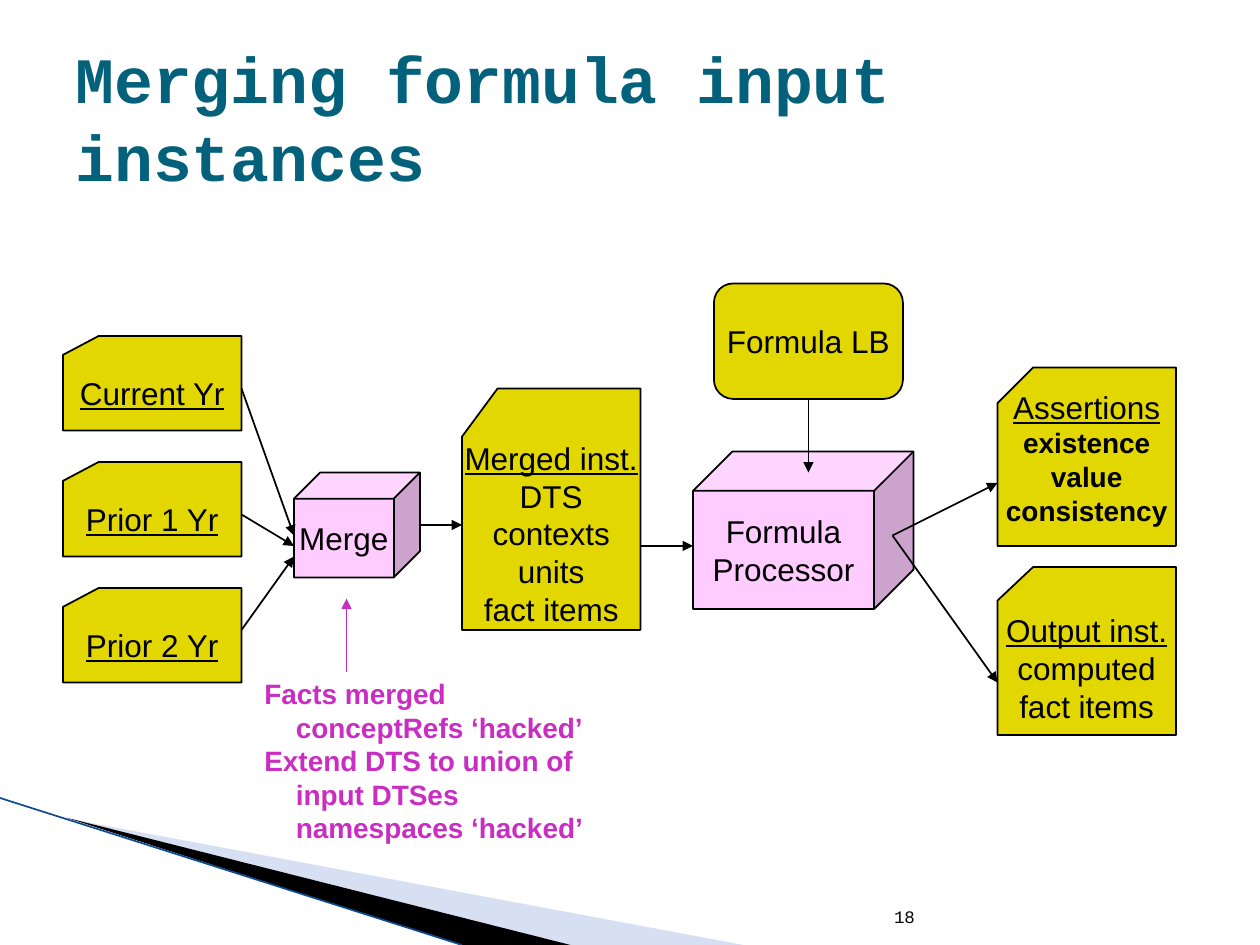
from dataclasses import dataclass

from lxml.etree import SubElement
from pptx import Presentation
from pptx.dml.color import RGBColor
from pptx.enum.shapes import MSO_CONNECTOR, MSO_SHAPE
from pptx.enum.text import MSO_ANCHOR, MSO_AUTO_SIZE, PP_ALIGN
from pptx.oxml.ns import qn
from pptx.util import Emu, Inches, Pt

CELL = Inches(1 / 12)
YELLOW, PINK, MAGENTA = "E2D700", "FFCCFF", "C92DC2"
BLACK, TEAL, PALE_BLUE, DARK_BLUE = "000000", "04617B", "9DB2E1", "0B4A94"


@dataclass(frozen=True)
class Line:
    text: str
    size: float = 18
    bold: bool = False
    underline: bool = False


@dataclass(frozen=True)
class Node:
    kind: MSO_SHAPE
    fill: str
    column: int
    row: int
    columns: int
    rows: int
    lines: tuple[Line, ...]
    adjustment: float | None = None
    bottom_margin: float = 0.05


@dataclass(frozen=True)
class Arrow:
    start: tuple[int, int]
    end: tuple[int, int]
    color: str = BLACK


def card(column: int, row: int, rows: int, heading: str, *details: Line, **options) -> Node:
    lines = (Line(heading, underline=True), *details)
    return Node(MSO_SHAPE.FLOWCHART_CARD, YELLOW, column, row, 17, rows, lines, **options)


YEARS = ("Current Yr", "Prior 1 Yr", "Prior 2 Yr")
NODES = (
    *(card(6, 32 + 12 * index, 9, year) for index, year in enumerate(YEARS)),
    Node(MSO_SHAPE.CUBE, PINK, 28, 45, 12, 10, (Line("Merge"),), 0.25),
    card(44, 37, 23, "Merged inst.",
         *map(Line, ("DTS", "contexts", "units", "fact items"))),
    Node(MSO_SHAPE.ROUNDED_RECTANGLE, YELLOW, 68, 27, 18, 11, (Line("Formula LB"),), 0.167),
    Node(MSO_SHAPE.CUBE, PINK, 66, 43, 21, 15, (Line("Formula"), Line("Processor")), 0.25),
    card(95, 35, 17, "Assertions",
         *(Line(text, 16, bold=True) for text in ("existence", "value", "consistency")),
         bottom_margin=0.32),
    card(95, 54, 16, "Output inst.", Line("computed"), Line("fact items")),
)
ARROWS = (
    Arrow((23, 37), (28, 51)),
    Arrow((23, 49), (28, 52)),
    Arrow((23, 60), (28, 53)),
    Arrow((40, 50), (44, 50)),
    Arrow((61, 52), (66, 52)),
    Arrow((77, 38), (77, 45)),
    Arrow((85, 51), (95, 46)),
    Arrow((85, 51), (95, 65)),
    Arrow((33, 64), (33, 57), MAGENTA),
)
NOTES = (
    ("Facts merged", 0),
    ("conceptRefs ‘hacked’", 0.25),
    ("Extend DTS to union of", 0),
    ("input DTSes", 0.25),
    ("namespaces ‘hacked’", 0.25),
)


def rgb(color: str) -> RGBColor:
    return RGBColor.from_string(color)


def add_text(frame, text: str, *, size: float, color: str = BLACK, font: str = "Arial",
             bold: bool = False, underline: bool = False,
             align: PP_ALIGN = PP_ALIGN.LEFT, indent: float = 0) -> None:
    first = frame.paragraphs[0]
    paragraph = frame.add_paragraph() if first.text else first
    paragraph.alignment = align
    if indent:
        paragraph._p.get_or_add_pPr().set("marL", str(Inches(indent)))
    run = paragraph.add_run()
    run.text = text
    run.font.name = font
    run.font.size = Pt(size)
    run.font.bold = bold
    run.font.underline = underline
    run.font.color.rgb = rgb(color)


def add_node(slide, node: Node) -> None:
    box = (node.column, node.row, node.columns, node.rows)
    shape = slide.shapes.add_shape(node.kind, *(Emu(CELL * value) for value in box))
    shape.shadow.inherit = False
    if node.adjustment is not None:
        shape.adjustments[0] = node.adjustment
    shape.fill.solid()
    shape.fill.fore_color.rgb = rgb(node.fill)
    shape.line.color.rgb = rgb(BLACK)
    shape.line.width = Pt(1)
    frame = shape.text_frame
    frame.word_wrap = False
    frame.vertical_anchor = MSO_ANCHOR.MIDDLE
    frame.margin_bottom = Inches(node.bottom_margin)
    for line in node.lines:
        add_text(frame, line.text, size=line.size, bold=line.bold,
                 underline=line.underline, align=PP_ALIGN.CENTER)


def add_line(slide, start: tuple[int, int], end: tuple[int, int], color: str,
             width: float = 1):
    connector = slide.shapes.add_connector(
        MSO_CONNECTOR.STRAIGHT, *(Emu(CELL * value) for value in (*start, *end)))
    connector.line.color.rgb = rgb(color)
    connector.line.width = Pt(width)
    SubElement(connector._element.spPr, qn("a:effectLst"))
    return connector


def add_arrow(slide, arrow: Arrow) -> None:
    connector = add_line(slide, arrow.start, arrow.end, arrow.color)
    SubElement(connector.line._get_or_add_ln(), qn("a:tailEnd"), type="triangle")


def add_wedge(slide, points: tuple[tuple[float, float], ...], color: str,
              opacity: int = 100) -> None:
    start, *others = [(Inches(x), Inches(y)) for x, y in points]
    builder = slide.shapes.build_freeform(*start)
    builder.add_line_segments(others, close=True)
    shape = builder.convert_to_shape()
    shape.shadow.inherit = False
    shape.line.fill.background()
    shape.fill.solid()
    shape.fill.fore_color.rgb = rgb(color)
    if opacity < 100:
        fill_color = shape._element.spPr.find(f"{qn('a:solidFill')}/{qn('a:srgbClr')}")
        SubElement(fill_color, qn("a:alpha"), val=str(opacity * 1000))


def add_text_box(slide, left: float, top: float, width: float, height: float):
    box = slide.shapes.add_textbox(*map(Inches, (left, top, width, height)))
    box.text_frame.word_wrap = True
    return box.text_frame


def add_title(slide, text: str) -> None:
    title = slide.shapes.title
    title.left, title.top, title.width, title.height = map(Inches, (0.5, 0.3, 9, 1.25))
    frame = title.text_frame
    frame.auto_size = MSO_AUTO_SIZE.NONE
    frame.vertical_anchor = MSO_ANCHOR.MIDDLE
    add_text(frame, text, size=37, color=TEAL, font="Courier New", bold=True)


def main() -> None:
    presentation = Presentation()
    presentation.slide_width, presentation.slide_height = Inches(10), Inches(7.5)
    slide = presentation.slides.add_slide(presentation.slide_layouts[5])

    add_wedge(slide, ((0.55, 6.5), (5.9, 7.5), (4.53, 7.5)), PALE_BLUE, opacity=40)
    add_wedge(slide, ((0.53, 6.49), (4.53, 7.5), (3.66, 7.5)), BLACK)
    add_line(slide, (0, 76), (44, 90), DARK_BLUE, width=0.95)

    number = add_text_box(slide, 4.79, 7.01, 2.57, 0.4)
    number.vertical_anchor = MSO_ANCHOR.BOTTOM
    add_text(number, "18", size=10, font="Courier New", align=PP_ALIGN.RIGHT)

    add_title(slide, "Merging formula input instances")
    for node in NODES:
        add_node(slide, node)
    for arrow in ARROWS:
        add_arrow(slide, arrow)

    notes = add_text_box(slide, 2, 5.32, 3.17, 1.45)
    for text, indent in NOTES:
        add_text(notes, text, size=16, color=MAGENTA, bold=True, indent=indent)

    presentation.save("out.pptx")


if __name__ == "__main__":
    main()
